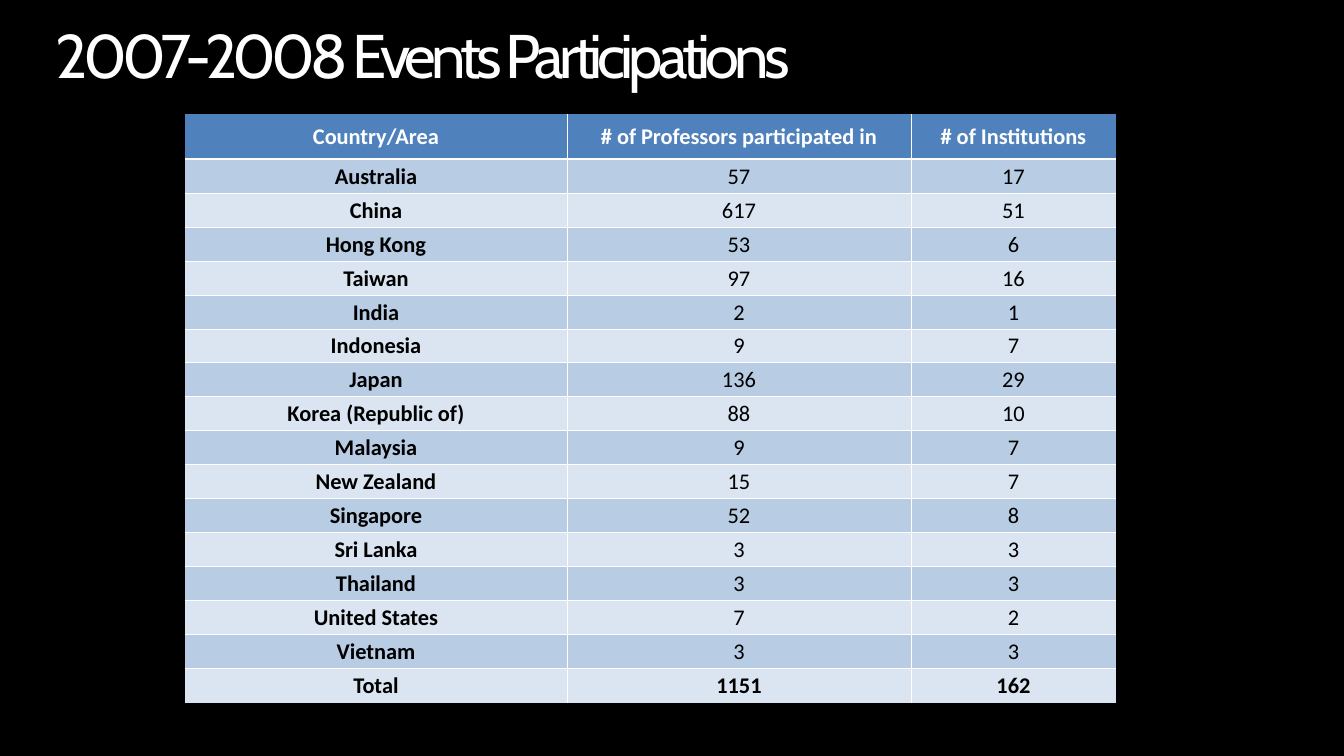
"""Build the 2007-2008 events participations slide."""
from lxml import etree
from pptx import Presentation, util as u
from pptx.dml.color import RGBColor
from pptx.enum import text
from pptx.oxml import ns

PX = 9525 * 96 / 100.8
WHITE, BLACK = "FFFFFF", "000000"
HEADER_FILL, BANDS = "4F81BD", ("DBE5F1", "B8CCE4")
COLS = (382, 344, 205)
HEADER_H, ROW_H = 45, 34
ROWS = [
    ("Country/Area", "# of Professors participated in", "# of Institutions"),
    ("Australia", 57, 17),
    ("China", 617, 51),
    ("Hong Kong", 53, 6),
    ("Taiwan", 97, 16),
    ("India", 2, 1),
    ("Indonesia", 9, 7),
    ("Japan", 136, 29),
    ("Korea (Republic of)", 88, 10),
    ("Malaysia", 9, 7),
    ("New Zealand", 15, 7),
    ("Singapore", 52, 8),
    ("Sri Lanka", 3, 3),
    ("Thailand", 3, 3),
    ("United States", 7, 2),
    ("Vietnam", 3, 3),
    ("Total", 1151, 162),
]
LAST_ROW, LAST_COL = len(ROWS) - 1, len(COLS) - 1


def px(*lengths):
    return [u.Emu(round(n * PX)) for n in lengths]


def write(tf, content, *, size, font, color, bold=False, align=text.PP_ALIGN.LEFT):
    p = tf.paragraphs[0]
    p.alignment = align
    r = p.add_run()
    r.text = str(content)
    r.font.size, r.font.name, r.font.bold = u.Pt(size), font, bold
    r.font.color.rgb = RGBColor.from_string(color)
    return p


prs = Presentation()
prs.slide_width, prs.slide_height = px(1344, 756)
s = prs.slides.add_slide(prs.slide_layouts[6])
s.background.fill.solid()
s.background.fill.fore_color.rgb = RGBColor.from_string(BLACK)

tf = s.shapes.add_textbox(*px(56, 25, 1155, 68)).text_frame
tf.word_wrap = True
tf.margin_left = tf.margin_right = tf.margin_top = tf.margin_bottom = 0
p = write(tf, "2007-2008 Events Participations", size=44, font="Cabin", color=WHITE)
p.line_spacing = 0.9
p.runs[0].font._element.set("spc", "-360")

table_h = HEADER_H + ROW_H * LAST_ROW
tbl = s.shapes.add_table(len(ROWS), len(COLS), *px(185, 114, sum(COLS), table_h)).table
tbl.horz_banding = False
for col, width in zip(tbl.columns, px(*COLS)):
    col.width = width

for i, values in enumerate(ROWS):
    tbl.rows[i].height = px(ROW_H if i else HEADER_H)[0]
    for j, value in enumerate(values):
        cell = tbl.cell(i, j)
        cell.margin_left = cell.margin_right = cell.margin_top = px(1)[0]
        cell.margin_bottom = 0
        cell.vertical_anchor = text.MSO_ANCHOR.MIDDLE
        write(cell.text_frame, value, size=16, font="Calibri",
              color=BLACK if i else WHITE, bold=j == 0 or i in (0, LAST_ROW),
              align=text.PP_ALIGN.CENTER)
        borders = (
            ("a:lnL", 0.5 if j > 0 else 0),
            ("a:lnR", 0.5 if j < LAST_COL else 0),
            ("a:lnT", (0, 1.5)[i] if i < 2 else 0.5),
            ("a:lnB", 1.5 if i == 0 else 0.5 if i < LAST_ROW else 0),
        )
        tcPr = cell._tc.get_or_add_tcPr()
        for tag, width in borders:
            ln = etree.SubElement(tcPr, ns.qn(tag), w=str(u.Pt(width)))
            if width:
                fill = etree.SubElement(ln, ns.qn("a:solidFill"))
                etree.SubElement(fill, ns.qn("a:srgbClr"), val=WHITE)
            else:
                etree.SubElement(ln, ns.qn("a:noFill"))
        cell.fill.solid()
        cell.fill.fore_color.rgb = RGBColor.from_string(BANDS[i % 2] if i else HEADER_FILL)

prs.save("out.pptx")
